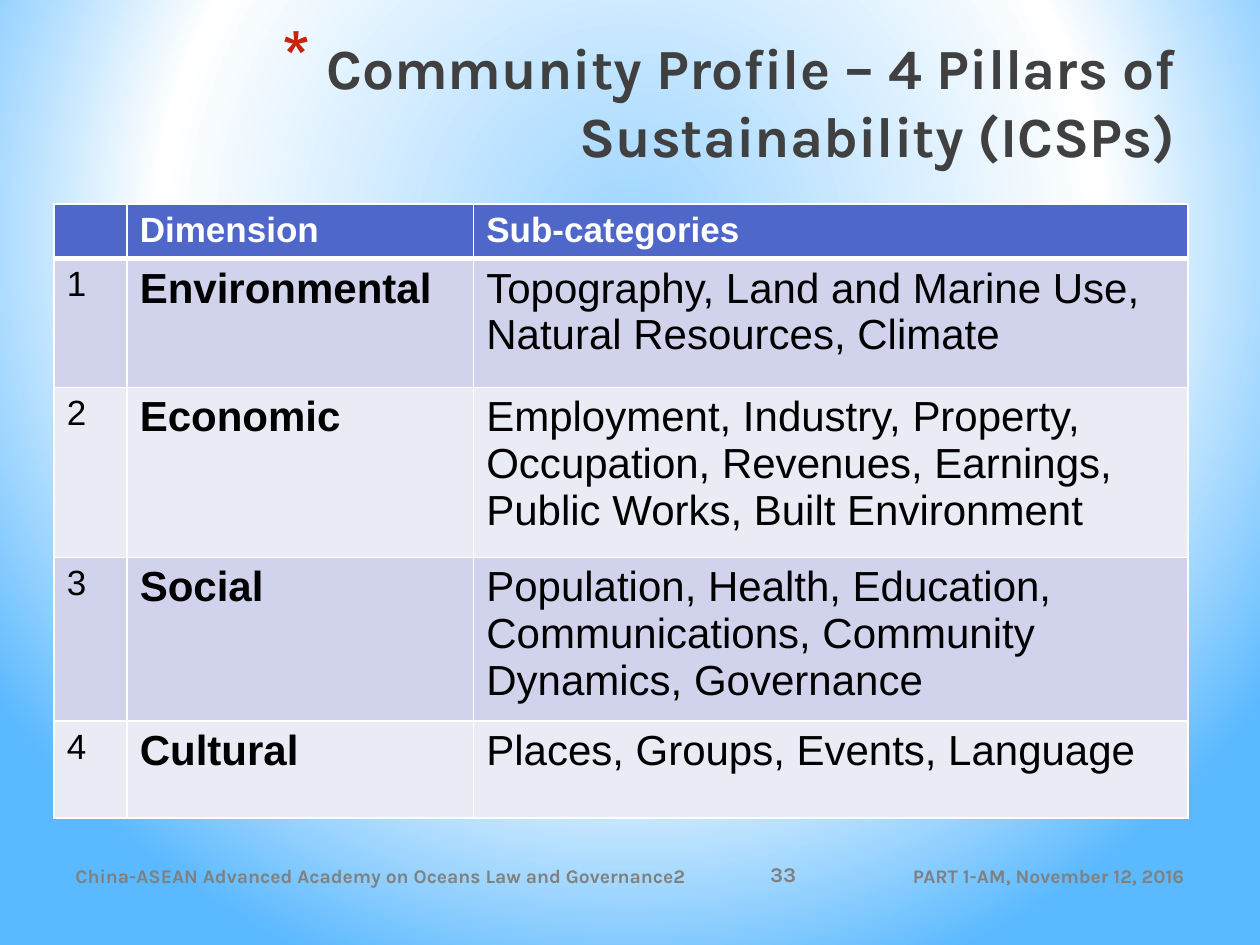
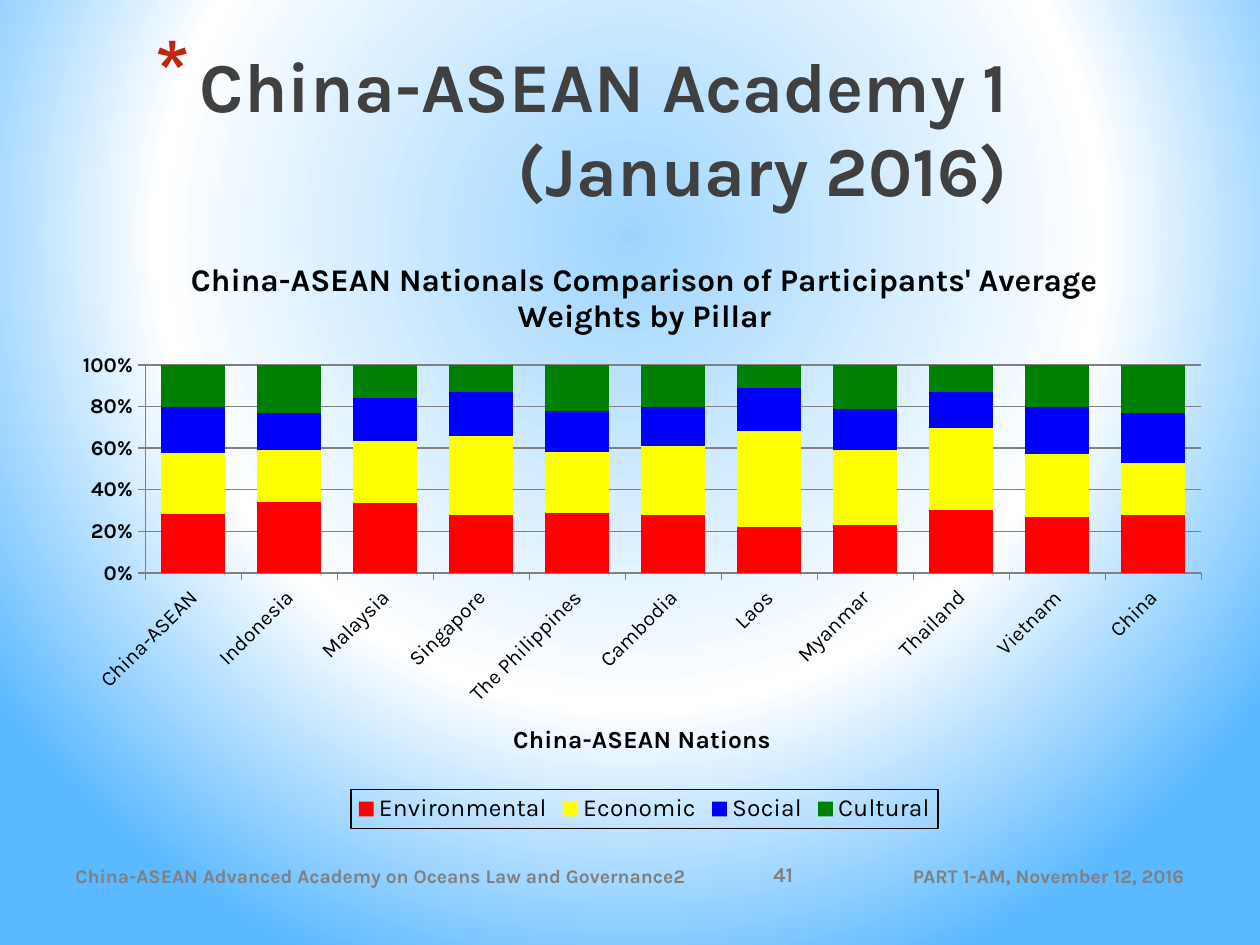
from lxml.etree import SubElement
from pptx import Presentation
from pptx.chart.data import CategoryChartData
from pptx.dml.color import RGBColor as RGB
from pptx.enum.chart import XL_CHART_TYPE as CT, XL_LEGEND_POSITION as LP, XL_TICK_MARK as TM
from pptx.enum.text import MSO_ANCHOR as ANCHOR, MSO_AUTO_SIZE as FIT, PP_ALIGN as AL
from pptx.oxml import parse_xml
from pptx.oxml.ns import nsdecls, qn
from pptx.util import Inches, Pt

COLORS = {
    "title": "404040", "bullet": "C3260C", "footer": "808080", "grid": "808080",
    "text": "000000", "white": "FFFFFF", "header": "4E67C8",
    "odd": "D0D3EB", "even": "E9EBF5", "bg_in": "9ED5FF", "bg_out": "5BB9FF",
    "Environmental": "FF0000", "Economic": "FFFF00", "Social": "0000FF", "Cultural": "008000",
}
HEAD_FONT, TABLE_FONT = "Karla", "Arial"

PILLARS = [
    ("Environmental", "Topography, Land and Marine Use, Natural Resources, Climate"),
    ("Economic", "Employment, Industry, Property, Occupation, Revenues, Earnings, "
                 "Public Works, Built Environment"),
    ("Social", "Population, Health, Education, Communications, Community Dynamics, Governance"),
    ("Cultural", "Places, Groups, Events, Language"),
]
NATIONS = ["China-ASEAN", "Indonesia", "Malaysia", "Singapore", "The Philippines", "Cambodia",
           "Laos", "Myanmar", "Thailand", "Vietnam", "China"]
WEIGHTS = {
    "Environmental": [28, 34, 34, 28, 29, 28, 22, 23, 30, 27, 28],
    "Economic": [29, 25, 30, 38, 29, 33, 46, 36, 39, 30, 25],
    "Social": [22, 18, 21, 21, 20, 19, 21, 20, 17, 23, 24],
    "Cultural": [20, 23, 16, 13, 22, 20, 11, 21, 13, 20, 23],
}


def rgb(name):
    return RGB.from_string(COLORS[name])


def style_font(font, size, color="text", bold=False, name=HEAD_FONT):
    font.size, font.bold, font.name = Pt(size), bold, name
    font.color.rgb = rgb(color)


def put_text(tf, text, align=AL.LEFT, **fmt):
    p = tf.paragraphs[0]
    p.alignment = align
    r = p.add_run()
    r.text = text
    style_font(r.font, **fmt)
    return p


def set_background(master):
    fill = master.background.fill
    fill.gradient()
    grad = master.element.find(".//" + qn("a:gradFill"))
    stops = "".join(f'<a:gs pos="{pos * 1000}"><a:srgbClr val="{COLORS[c]}"/></a:gs>'
                    for pos, c in ((0, "bg_in"), (60, "white"), (100, "bg_out")))
    new = parse_xml(f'<a:gradFill {nsdecls("a")} rotWithShape="1"><a:gsLst>{stops}</a:gsLst>'
                    '<a:path path="circle"><a:fillToRect l="20000" t="10000" r="20000" '
                    'b="60000"/></a:path></a:gradFill>')
    grad.getparent().replace(grad, new)


def add_title(s, text, box, size):
    sp = s.shapes.title
    sp.left, sp.top, sp.width, sp.height = map(Inches, box)
    tf = sp.text_frame
    tf.word_wrap, tf.auto_size, tf.vertical_anchor = True, FIT.NONE, ANCHOR.TOP
    p = put_text(tf, text, AL.RIGHT, size=size, color="title", bold=True)
    pPr = p._p.get_or_add_pPr()
    pPr.set("marL", str(Inches(0.35)))
    pPr.set("indent", str(Inches(-0.35)))
    clr = SubElement(pPr, qn("a:buClr"))
    SubElement(clr, qn("a:srgbClr"), val=COLORS["bullet"])
    SubElement(pPr, qn("a:buSzPct"), val="128000")
    SubElement(pPr, qn("a:buChar"), char="*")


def add_footer(s, number):
    for text, left, top, width, align, size in (
            ("PART 1-AM, November 12, 2016", 6.75, 6.75, 2.75, AL.RIGHT, 11),
            ("China-ASEAN Advanced Academy on Oceans Law and Governance2",
             0.5, 6.75, 5.29, AL.LEFT, 11),
            (str(number), 5.87, 6.74, 0.69, AL.CENTER, 12)):
        box = s.shapes.add_textbox(Inches(left), Inches(top), Inches(width), Inches(0.4))
        tf = box.text_frame
        tf.word_wrap, tf.vertical_anchor = True, ANCHOR.MIDDLE
        put_text(tf, text, align, size=size, color="footer", bold=True)


def set_borders(cell, widths):
    tcPr = cell._tc.get_or_add_tcPr()
    for side, width in widths.items():
        ln = SubElement(tcPr, qn(f"a:ln{side}"), w=str(Pt(width)))
        fill = SubElement(ln, qn("a:solidFill"))
        SubElement(fill, qn("a:srgbClr"), val=COLORS["white"])


def fill_cell(cell, text, fill, widths, **fmt):
    set_borders(cell, widths)
    cell.fill.solid()
    cell.fill.fore_color.rgb = rgb(fill)
    if text:
        put_text(cell.text_frame, text, name=TABLE_FONT, **fmt)


def add_pillar_table(s):
    cols, heights = (0.58, 2.75, 5.67), (0.41, 1.02, 1.35, 1.02, 0.77)
    table = s.shapes.add_table(len(heights), len(cols), Inches(0.43), Inches(1.62),
                               Inches(sum(cols)), Inches(sum(heights))).table
    for col, width in zip(table.columns, cols):
        col.width = Inches(width)
    for row, height in zip(table.rows, heights):
        row.height = Inches(height)
    thin = dict.fromkeys("LRTB", 1)
    for c, text in enumerate(("", "Dimension", "Sub-categories")):
        fill_cell(table.cell(0, c), text, "header", {**thin, "B": 3},
                  size=20, color="white", bold=True)
    for r, (pillar, topics) in enumerate(PILLARS, 1):
        fill = "odd" if r % 2 else "even"
        widths = {**thin, "T": 3} if r == 1 else thin
        for c, text in enumerate((str(r), pillar, topics)):
            fill_cell(table.cell(r, c), text, fill, widths,
                      size=24 if c else 20, bold=c == 1)


def set_plot_layout(chart, x, y, w, h):
    plot_area = chart._chartSpace.chart.plotArea
    for old in plot_area.findall(qn("c:layout")):
        plot_area.remove(old)
    sizes = "".join(f'<c:{tag} val="{val}"/>' for tag, val in zip("xywh", (x, y, w, h)))
    plot_area.insert(0, parse_xml(
        f'<c:layout {nsdecls("c")}><c:manualLayout><c:layoutTarget val="inner"/>'
        f'<c:xMode val="edge"/><c:yMode val="edge"/>{sizes}</c:manualLayout></c:layout>'))


def style_axis(axis, bold):
    style_font(axis.tick_labels.font, 12, bold=bold)
    axis.major_tick_mark, axis.minor_tick_mark = TM.OUTSIDE, TM.NONE
    axis.format.line.color.rgb = rgb("grid")


def add_legend(chart):
    chart.has_legend = True
    legend = chart.legend
    legend.position, legend.include_in_layout = LP.BOTTOM, False
    style_font(legend.font, 14)
    legend._element.find(qn("c:txPr")).addprevious(parse_xml(
        f'<c:spPr {nsdecls("c", "a")}><a:ln w="9525"><a:solidFill>'
        f'<a:srgbClr val="{COLORS["text"]}"/></a:solidFill></a:ln></c:spPr>'))


def add_weights_chart(s):
    data = CategoryChartData()
    data.categories = NATIONS
    for pillar, values in WEIGHTS.items():
        data.add_series(pillar, values)
    chart = s.shapes.add_chart(CT.COLUMN_STACKED_100, Inches(0.51), Inches(1.86),
                               Inches(9.21), Inches(4.72), data).chart
    style_font(chart.font, 10)
    chart.has_title = True
    put_text(chart.chart_title.text_frame, "China-ASEAN Nationals Comparison of Participants' "
             "Average Weights by Pillar", AL.CENTER, size=18, bold=True)
    chart.chart_title.include_in_layout = False
    plot = chart.plots[0]
    plot.gap_width, plot.overlap, plot.vary_by_categories = 50, 100, False
    for series in plot.series:
        series.format.fill.solid()
        series.format.fill.fore_color.rgb = rgb(series.name)
    cat, val = chart.category_axis, chart.value_axis
    style_axis(cat, False)
    style_axis(val, True)
    cat._element.find(qn("c:txPr")).find(qn("a:bodyPr")).set("rot", "-2700000")
    put_text(cat.axis_title.text_frame, "China-ASEAN Nations", AL.CENTER, size=14, bold=True)
    val.has_major_gridlines = True
    val.major_gridlines.format.line.color.rgb = rgb("grid")
    val.tick_labels.number_format = "0%"
    val.tick_labels.number_format_is_linked = False
    add_legend(chart)
    set_plot_layout(chart, 0.07, 0.22, 0.91, 0.35)


def add_slide(prs, title, box, size, number):
    s = prs.slides.add_slide(prs.slide_layouts[5])
    add_title(s, title, box, size)
    add_footer(s, number)
    return s


def main():
    """Build the two sustainability slides and save them."""
    prs = Presentation()
    prs.slide_width, prs.slide_height = Inches(10), Inches(7.5)
    set_background(prs.slide_master)
    s = add_slide(prs, "Community Profile – 4 Pillars of Sustainability (ICSPs)",
                  (0.43, 0.21, 9, 0.58), 32.4, 33)
    add_pillar_table(s)
    s = add_slide(prs, "China-ASEAN Academy 1 (January 2016)", (0.98, 0.29, 7.12, 1.25), 40, 41)
    add_weights_chart(s)
    prs.save("out.pptx")


if __name__ == "__main__":
    main()
